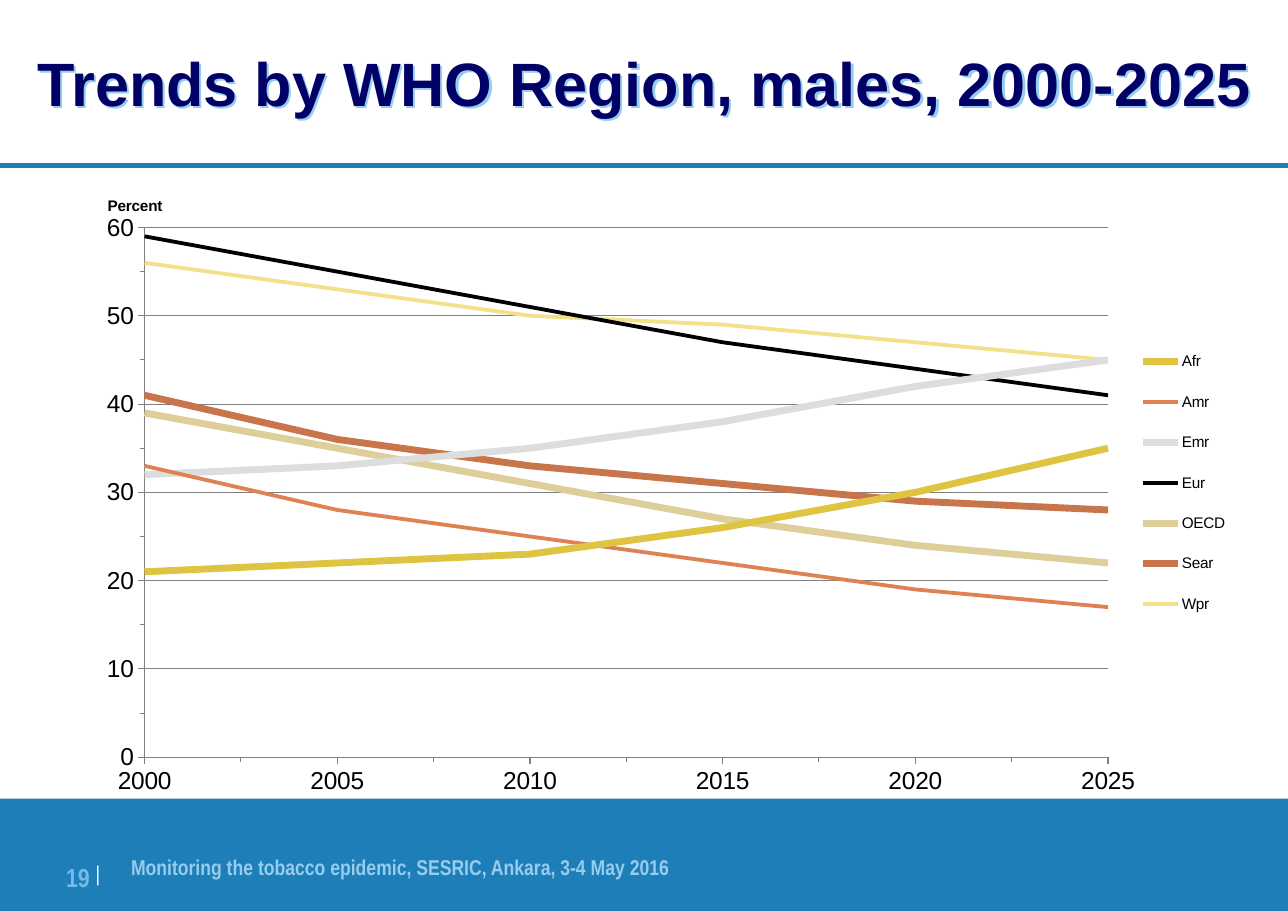
"""Build the slide on smoking trends among males by region."""
from lxml import etree
from pptx import Presentation
from pptx import util as u
from pptx.chart import data
from pptx.dml.color import RGBColor
from pptx.enum import chart as ch, shapes, text
from pptx.oxml import ns

BLUE = RGBColor(0x1E, 0x7F, 0xB8)
NAVY = RGBColor(0x00, 0x00, 0x66)
SKY = RGBColor(0x96, 0xCC, 0xEE)
PALE = RGBColor(0x72, 0xBB, 0xE8)
WHITE = RGBColor(0xFF, 0xFF, 0xFF)
BLACK = RGBColor(0x00, 0x00, 0x00)
GREY = RGBColor(0x80, 0x80, 0x80)
GOLD = RGBColor(0xDE, 0xC4, 0x41)
CORAL = RGBColor(0xDF, 0x82, 0x53)
SILVER = RGBColor(0xDD, 0xDD, 0xDD)
SAND = RGBColor(0xDD, 0xCE, 0x9A)
RUST = RGBColor(0xC9, 0x75, 0x4B)
LEMON = RGBColor(0xF5, 0xE0, 0x8A)

YEARS = range(2000, 2026, 5)
TRENDS = [
    ("Afr", GOLD, 4.5, (21, 22, 23, 26, 30, 35)),
    ("Amr", CORAL, 2.5, (33, 28, 25, 22, 19, 17)),
    ("Emr", SILVER, 4.5, (32, 33, 35, 38, 42, 45)),
    ("Eur", BLACK, 2.5, (59, 55, 51, 47, 44, 41)),
    ("OECD", SAND, 4.5, (39, 35, 31, 27, 24, 22)),
    ("Sear", RUST, 4.5, (41, 36, 33, 31, 29, 28)),
    ("Wpr", LEMON, 2.5, (56, 53, 50, 49, 47, 45)),
]


def add(node, tag, **attrs):
    """Append a child element with the given attributes."""
    return etree.SubElement(node, ns.qn(tag), **attrs)


def place(node, spot, **vals):
    """Give a chart part a manual layout."""
    for old in node.findall(ns.qn("c:layout")):
        node.remove(old)
    box = etree.Element(ns.qn("c:layout"))
    man = add(box, "c:manualLayout")
    for key, val in vals.items():
        add(man, "c:" + key, val=str(val))
    node.insert(spot, box)


class Deck:
    """Hold the style and the current slide."""

    def __init__(self, width, height):
        """Start a deck with one blank slide."""
        self.prs = Presentation()
        self.prs.slide_width = u.Inches(width)
        self.prs.slide_height = u.Inches(height)
        self.slide = self.prs.slides.add_slide(self.prs.slide_layouts[6])
        self.face = "Arial"

    def rule(self, x, y, end, color, width):
        """Draw a level line."""
        line = self.slide.shapes.add_connector(
            shapes.MSO_CONNECTOR.STRAIGHT,
            u.Inches(x), u.Inches(y), u.Inches(end), u.Inches(y))
        line.line.color.rgb = color
        line.line.width = u.Pt(width)
        add(line._element.spPr, "a:effectLst")

    def band(self, box, color):
        """Draw a filled rectangle."""
        rect = self.slide.shapes.add_shape(
            shapes.MSO_SHAPE.RECTANGLE, *map(u.Inches, box))
        rect.shadow.inherit = False
        rect.fill.solid()
        rect.fill.fore_color.rgb = color
        rect.line.fill.background()

    def label(self, box, parts, face, align=text.PP_ALIGN.LEFT,
              anchor=text.MSO_ANCHOR.TOP):
        """Write one bold paragraph from (words, size, color) parts."""
        shape = self.slide.shapes.add_textbox(*map(u.Inches, box))
        frame = shape.text_frame
        frame.word_wrap = True
        frame.vertical_anchor = anchor
        frame.margin_left = frame.margin_right = 0
        frame.margin_top = frame.margin_bottom = 0
        para = frame.paragraphs[0]
        para.alignment = align
        for words, size, color in parts:
            run = para.add_run()
            run.text = words
            run.font.name = face
            run.font.size = u.Pt(size)
            run.font.bold = True
            run.font.color.rgb = color
        return shape

    def shade(self, shape, color):
        """Cast a hard shadow to the lower right."""
        fx = add(shape._element.spPr, "a:effectLst")
        cast = add(fx, "a:outerShdw", dist=str(u.Pt(2)), dir="2700000",
                   algn="ctr", rotWithShape="0")
        add(cast, "a:srgbClr", val=str(color))

    def scale(self, axis, low, high, step):
        """Set the range, ticks and look of an axis."""
        axis.minimum_scale, axis.maximum_scale = low, high
        axis.major_unit, axis.minor_unit = step, step / 2
        axis.major_tick_mark = axis.minor_tick_mark = ch.XL_TICK_MARK.OUTSIDE
        axis.has_major_gridlines = False
        axis.format.line.color.rgb = GREY
        axis.format.line.width = u.Pt(0.75)
        axis.tick_labels.font.size = u.Pt(16)
        axis.tick_labels.number_format = "General"
        axis.tick_labels.number_format_is_linked = False

    def chart(self, box, years, trends):
        """Plot smooth trend lines with a legend on the right."""
        points = data.XyChartData()
        for name, _, _, vals in trends:
            row = points.add_series(name)
            for year, val in zip(years, vals):
                row.add_data_point(year, val)
        chart = self.slide.shapes.add_chart(
            ch.XL_CHART_TYPE.XY_SCATTER_SMOOTH_NO_MARKERS,
            *map(u.Inches, box), points).chart
        chart.font.name = self.face
        chart.font.size = u.Pt(10)
        chart.font.color.rgb = BLACK
        chart.has_title = False
        plot = chart.plots[0]
        plot.vary_by_categories = False
        for line, (_, color, width, _) in zip(plot.series, trends):
            line.smooth = True
            line.marker.style = ch.XL_MARKER_STYLE.NONE
            line.format.line.color.rgb = color
            line.format.line.width = u.Pt(width)

        self.scale(chart.category_axis, years[0], years[-1], 5)
        axis = chart.value_axis
        self.scale(axis, 0, 60, 10)
        axis.has_major_gridlines = True
        axis.major_gridlines.format.line.color.rgb = GREY
        axis.major_gridlines.format.line.width = u.Pt(0.75)
        frame = axis.axis_title.text_frame
        frame.text = "Percent"
        font = frame.paragraphs[0].runs[0].font
        font.size, font.bold = u.Pt(10), True
        font.color.rgb = BLACK

        chart.has_legend = True
        chart.legend.position = ch.XL_LEGEND_POSITION.RIGHT
        chart.legend.include_in_layout = False
        root = chart._chartSpace
        body = root.xpath(".//c:title//a:bodyPr")[0]
        body.set("rot", "0")
        body.set("vert", "horz")
        edge = {"xMode": "edge", "yMode": "edge"}
        place(root.xpath(".//c:plotArea")[0], 0, layoutTarget="inner",
              **edge, x=0.07, y=0.073, w=0.825, h=0.865)
        place(root.xpath(".//c:valAx/c:title")[0], 1, **edge, x=0.036, y=0.016)
        place(root.xpath(".//c:legend")[0], 1, **edge,
              x=0.92, y=0.24, w=0.08, h=0.5)


def main():
    """Draw the slide and save it."""
    deck = Deck(11.69, 8.27)
    deck.rule(0, 1.5, 11.69, BLUE, 3)
    deck.band((0, 7.25, 11.69, 1.02), BLUE)
    narrow = "Arial Narrow"
    event = "Monitoring the tobacco epidemic, SESRIC, Ankara, 3-4 May 2016"
    deck.label((1.19, 7.75, 5.43, 0.52), [(event, 14, SKY)], narrow)
    page = deck.label((0.46, 7.72, 0.45, 0.4),
                      [("19 ", 17, PALE), ("|", 24, WHITE)],
                      narrow, text.PP_ALIGN.RIGHT)
    bar = page.text_frame.paragraphs[0].runs[1]
    bar.font.bold = False
    bar._r.get_or_add_rPr().set("baseline", "14000")
    title = deck.label((0, 0, 11.69, 1.49),
                       [("Trends by WHO Region, males, 2000-2025", 40, NAVY)],
                       deck.face, text.PP_ALIGN.CENTER, text.MSO_ANCHOR.MIDDLE)
    deck.shade(title, SKY)
    deck.chart((0.57, 1.66, 10.6, 5.56), YEARS, TRENDS)
    deck.prs.save("out.pptx")


if __name__ == "__main__":
    main()
